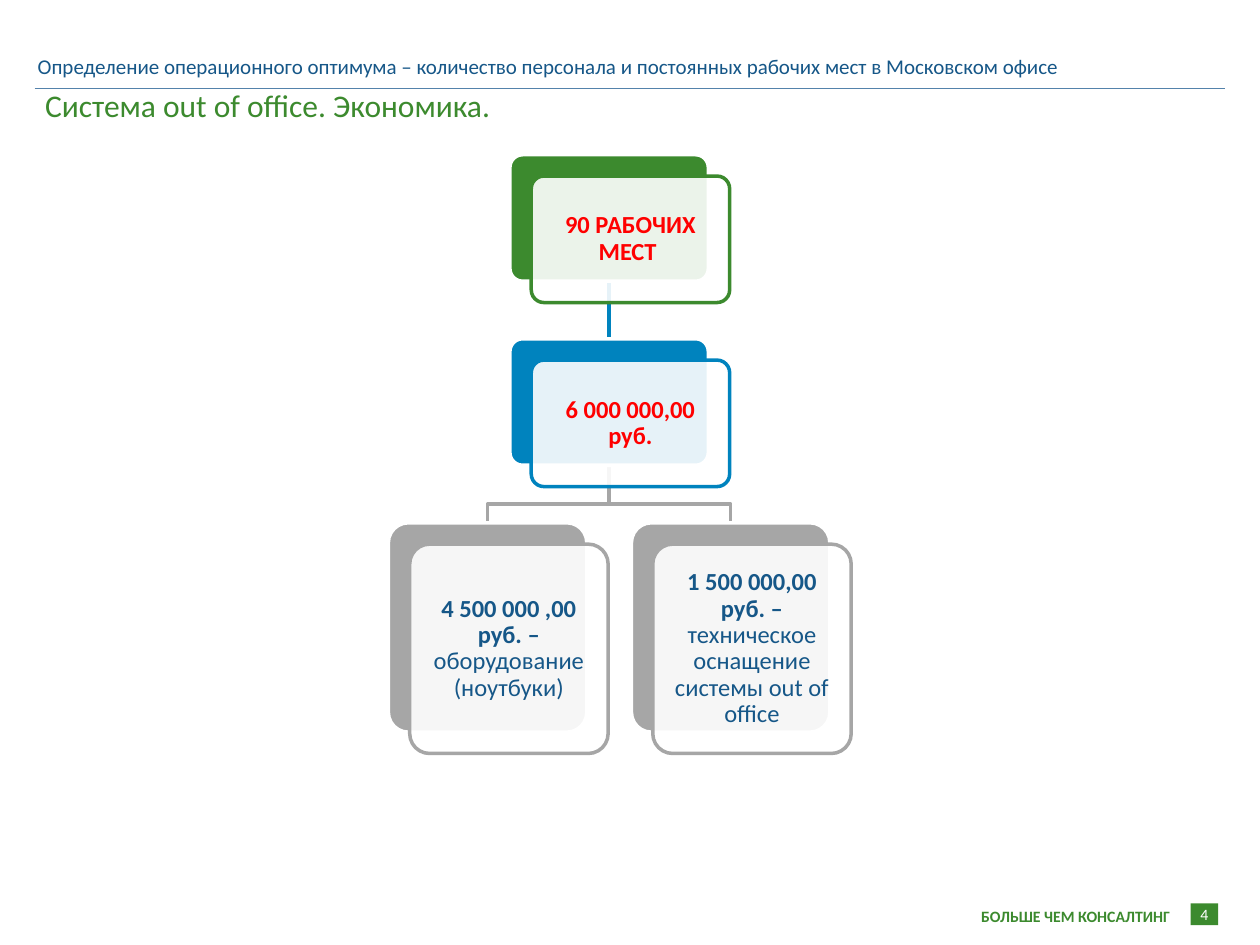
"""Builds the out of office economics slide with its cost breakdown chart."""
from lxml.etree import SubElement
from pptx import Presentation
from pptx.dml.color import RGBColor
from pptx.enum.shapes import MSO_CONNECTOR as Connector, MSO_SHAPE as Shape
from pptx.enum.text import MSO_ANCHOR as Anchor, MSO_AUTO_SIZE as AutoSize, PP_ALIGN as Align
from pptx.oxml.ns import qn
from pptx.util import Cm, Pt

COLORS = {"green": "3C8A2E", "blue": "0083BE", "gray": "A6A6A6", "navy": "165788",
          "rule": "5482AB", "red": "FF0000", "white": "FFFFFF"}
COLORS = {name: RGBColor.from_string(value) for name, value in COLORS.items()}


def write(shape, runs, size, color, align, anchor, inset, wrap=True):
    frame = shape.text_frame
    settings = {"word_wrap": wrap, "auto_size": AutoSize.NONE, "vertical_anchor": anchor,
                "margin_left": inset[0], "margin_right": inset[0],
                "margin_top": inset[1], "margin_bottom": inset[1]}
    for name, value in settings.items():
        setattr(frame, name, value)
    paragraph = frame.paragraphs[0]
    paragraph.alignment = align
    for text, bold in runs:
        run = paragraph.add_run()
        run.text = text
        for name, value in {"name": "Calibri", "size": Pt(size), "bold": bold}.items():
            setattr(run.font, name, value)
        run.font.color.rgb = COLORS[color]
    return paragraph


def style_line(shape, color, width):
    shape.line.color.rgb = COLORS[color]
    shape.line.width = Pt(width)
    if shape.shape_type is not None and hasattr(shape, "begin_x"):
        SubElement(shape.element.spPr, qn("a:effectLst"))
    else:
        shape.shadow.inherit = False


presentation = Presentation()
presentation.slide_width, presentation.slide_height = Cm(25.4), Cm(19.05)
slide = presentation.slides.add_slide(presentation.slide_layouts[5])
shapes = slide.shapes

title = shapes.title
title_place = {"left": Cm(0.51), "top": Cm(0.95), "width": Cm(24), "height": Cm(1.2)}
for name, value in title_place.items():
    setattr(title, name, value)
heading = "Определение операционного оптимума – количество персонала и постоянных рабочих мест в Московском офисе"
padding = (Cm(0.25), Cm(0.13))
write(title, [(heading, False)], 12, "navy", Align.LEFT, Anchor.TOP, padding)

rule = shapes.add_connector(Connector.STRAIGHT, Cm(0.7), Cm(1.78), Cm(24.7), Cm(1.78))
style_line(rule, "rule", 0.5)

subtitle = shapes.add_textbox(Cm(0.66), Cm(1.61), Cm(24), Cm(1.2))
write(subtitle, [("Система out of office. Экономика.", False)], 18, "green",
      Align.LEFT, Anchor.TOP, padding)

slogan = shapes.add_textbox(Cm(19.53), Cm(18.14), Cm(4.37), Cm(0.64))
write(slogan, [("БОЛЬШЕ ЧЕМ КОНСАЛТИНГ", True)], 9, "green",
      Align.LEFT, Anchor.TOP, padding, wrap=False)

page_number = shapes.add_shape(Shape.RECTANGLE, Cm(24), Cm(18.21), Cm(0.56), Cm(0.44))
page_number.shadow.inherit = False
page_number.fill.solid()
page_number.fill.fore_color.rgb = COLORS["green"]
page_number.line.fill.background()
write(page_number, [("4", False)], 9, "white", Align.CENTER, Anchor.MIDDLE, (0, 0), wrap=False)

CENTER, SPREAD, TOP, PITCH = 12.28, 2.45, 3.12, 3.71
WIDTH, SHORT, TALL, OFFSET = 4, 2.55, 4.22, 0.43
leaf_top = TOP + 2 * PITCH

for side in (1, -1):
    branch_x = Cm(CENTER + side * SPREAD)
    bend_y = Cm(leaf_top - 0.38)
    builder = shapes.build_freeform(Cm(CENTER), Cm(TOP + PITCH + SHORT))
    builder.add_line_segments([(Cm(CENTER), bend_y), (branch_x, bend_y),
                               (branch_x, Cm(leaf_top))], close=False)
    branch = builder.convert_to_shape()
    branch.fill.background()
    style_line(branch, "gray", 2)

trunk = shapes.add_connector(Connector.STRAIGHT, Cm(CENTER), Cm(TOP + SHORT),
                             Cm(CENTER), Cm(TOP + PITCH))
style_line(trunk, "blue", 2)

cards = [
    (0, 0, SHORT, "green", "red", [("90 РАБОЧИХ МЕСТ ", True)]),
    (0, 1, SHORT, "blue", "red", [("6 000 000,00 руб.", True)]),
    (-SPREAD, 2, TALL, "gray", "navy",
     [("4 500 000 ,00 руб. – ", True), ("оборудование (ноутбуки)", False)]),
    (SPREAD, 2, TALL, "gray", "navy",
     [("1 500 000,00 руб. – ", True), ("техническое оснащение системы out of office", False)]),
]
for shift, level, height, color, text_color, runs in cards:
    left, top = CENTER + shift - WIDTH / 2, TOP + level * PITCH
    for offset, fill, outline in ((0, color, "white"), (OFFSET, "white", color)):
        card = shapes.add_shape(Shape.ROUNDED_RECTANGLE, Cm(left + offset), Cm(top + offset),
                                Cm(WIDTH), Cm(height))
        card.adjustments[0] = 0.1
        card.fill.solid()
        card.fill.fore_color.rgb = COLORS[fill]
        style_line(card, outline, 2)
    color_element = card.element.spPr.find(qn("a:solidFill")).find(qn("a:srgbClr"))
    SubElement(color_element, qn("a:alpha"), val="90000")
    paragraph = write(card, runs, 14, text_color, Align.CENTER, Anchor.MIDDLE,
                      (Cm(0.15), Cm(0.15)))
    paragraph.line_spacing = 0.9

presentation.save("out.pptx")
